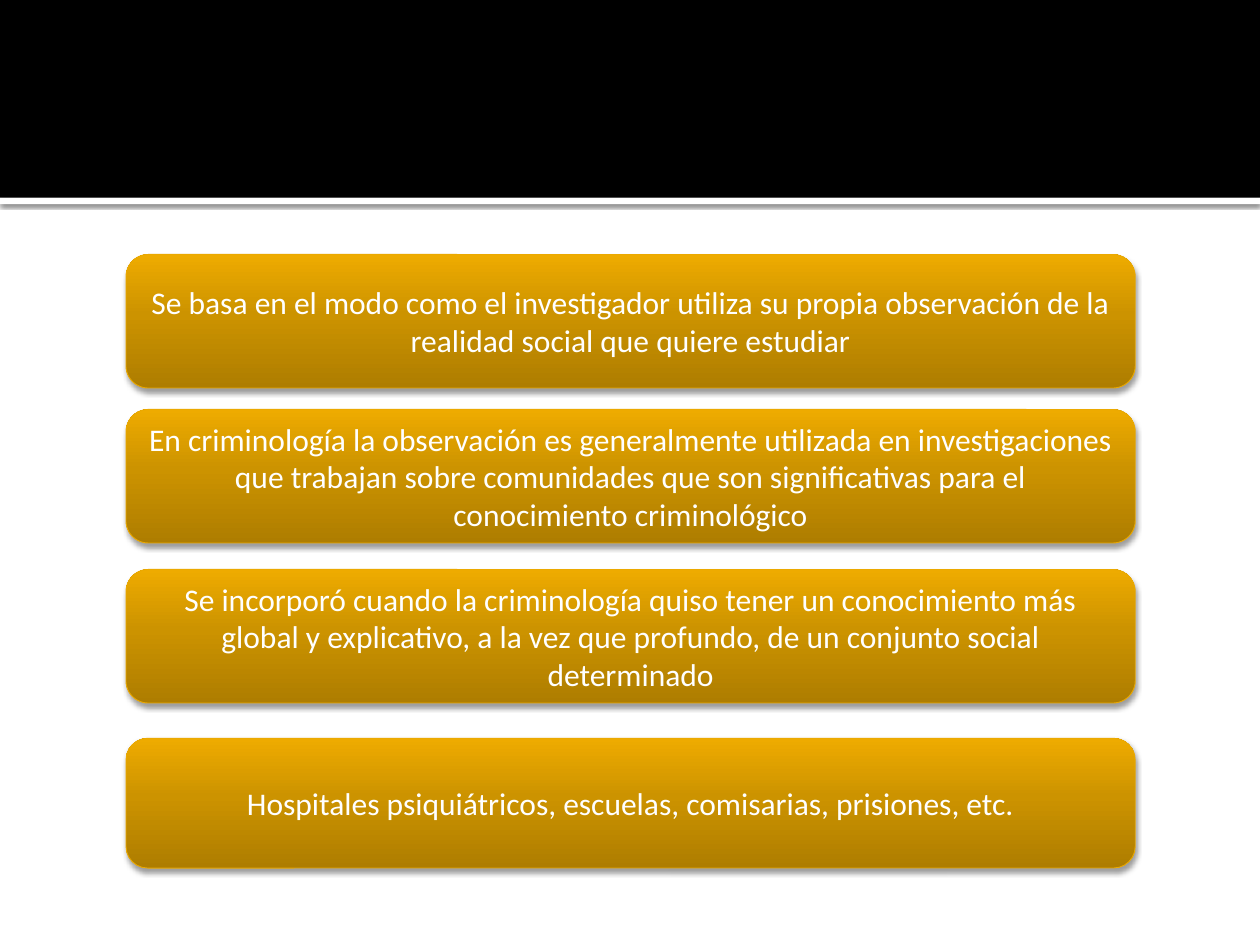
from dataclasses import dataclass

from lxml import etree
from pptx import Presentation
from pptx.dml.color import RGBColor
from pptx.enum.shapes import MSO_SHAPE
from pptx.enum.text import MSO_ANCHOR, PP_ALIGN
from pptx.oxml.ns import qn
from pptx.util import Inches, Pt

RECT = MSO_SHAPE.RECTANGLE
ROUNDED = MSO_SHAPE.ROUNDED_RECTANGLE
MIDDLE = MSO_ANCHOR.MIDDLE
CENTER = PP_ALIGN.CENTER

WIDTH, HEIGHT = 10, 7.5
HEADER_H, RULE_H = 1.57, 0.05
CARD_LEFT, CARD_W = WIDTH * 0.1, 8.01
FONT = "Calibri"
COLORS = {
    "header": "000000",
    "paper": "FFFFFF",
    "shadow": "000000",
    "text": "FFFFFF",
    "edge": "EBA900",
    "dark": "AE7D00",
    "mid": "CC9300",
    "light": "EEAB00",
}
GRADIENT = ((0, "dark"), (55, "mid"), (100, "light"))


@dataclass(frozen=True)
class Shadow:
    alpha: int
    blur: float
    dist: float


@dataclass(frozen=True)
class Card:
    top: float
    height: float
    text: str


RULE_SHADOW = Shadow(60, 2.5, 0.8)
CARD_SHADOW = Shadow(38, 3.1, 2)
CARDS = (
    Card(2.02, 1.06, "Se basa en el modo como el investigador utiliza su propia "
         "observación de la realidad social que quiere estudiar"),
    Card(3.25, 1.06, "En criminología la observación es generalmente utilizada en "
         "investigaciones que trabajan sobre comunidades que son significativas "
         "para el conocimiento criminológico"),
    Card(4.52, 1.06, "Se incorporó cuando la criminología quiso tener un conocimiento "
         "más global y explicativo, a la vez que profundo, de un conjunto social "
         "determinado"),
    Card(5.86, 1.03, "Hospitales psiquiátricos, escuelas, comisarias, prisiones, etc."),
)


def rgb(name: str) -> RGBColor:
    return RGBColor.from_string(COLORS[name])


def add_color(parent, name: str):
    return etree.SubElement(parent, qn("a:srgbClr"), val=COLORS[name])


def add_shadow(sp, shadow: Shadow) -> None:
    effects = sp._element.spPr.find(qn("a:effectLst"))
    outer = etree.SubElement(
        effects, qn("a:outerShdw"), blurRad=str(Pt(shadow.blur)),
        dist=str(Pt(shadow.dist)), dir="5400000", rotWithShape="0")
    color = add_color(outer, "shadow")
    etree.SubElement(color, qn("a:alpha"), val=str(shadow.alpha * 1000))


def add_box(slide, kind, left: float, top: float, width: float, height: float):
    sp = slide.shapes.add_shape(
        kind, Inches(left), Inches(top), Inches(width), Inches(height))
    sp.shadow.inherit = False
    return sp


def add_band(slide, top: float, height: float, color: str):
    sp = add_box(slide, RECT, 0, top, WIDTH, height)
    sp.fill.solid()
    sp.fill.fore_color.rgb = rgb(color)
    sp.line.fill.background()
    return sp


def fill_gradient(sp) -> None:
    sp.fill.gradient()
    sp.fill.gradient_angle = 90
    stops = sp._element.spPr.find(qn("a:gradFill")).find(qn("a:gsLst"))
    for stop in list(stops):
        stops.remove(stop)
    for share, color in GRADIENT:
        stop = etree.SubElement(stops, qn("a:gs"), pos=str(share * 1000))
        add_color(stop, color)


def write_text(sp, text: str, *, size: float, color: str) -> None:
    tf = sp.text_frame
    tf.word_wrap = True
    tf.vertical_anchor = MIDDLE
    p = tf.paragraphs[0]
    p.alignment = CENTER
    r = p.add_run()
    r.text = text
    r.font.name = FONT
    r.font.size = Pt(size)
    r.font.color.rgb = rgb(color)


def add_card(slide, card: Card) -> None:
    sp = add_box(slide, ROUNDED, CARD_LEFT, card.top, CARD_W, card.height)
    fill_gradient(sp)
    sp.line.color.rgb = rgb("edge")
    sp.line.width = Pt(0.5)
    add_shadow(sp, CARD_SHADOW)
    write_text(sp, card.text, size=18, color="text")


def main() -> None:
    prs = Presentation()
    prs.slide_width, prs.slide_height = Inches(WIDTH), Inches(HEIGHT)
    slide = prs.slides.add_slide(prs.slide_layouts[6])
    slide.background.fill.solid()
    slide.background.fill.fore_color.rgb = rgb("paper")
    rule = add_band(slide, HEADER_H, RULE_H, "paper")
    add_shadow(rule, RULE_SHADOW)
    add_band(slide, 0, HEADER_H, "header")
    for card in CARDS:
        add_card(slide, card)
    prs.save("out.pptx")


if __name__ == "__main__":
    main()
